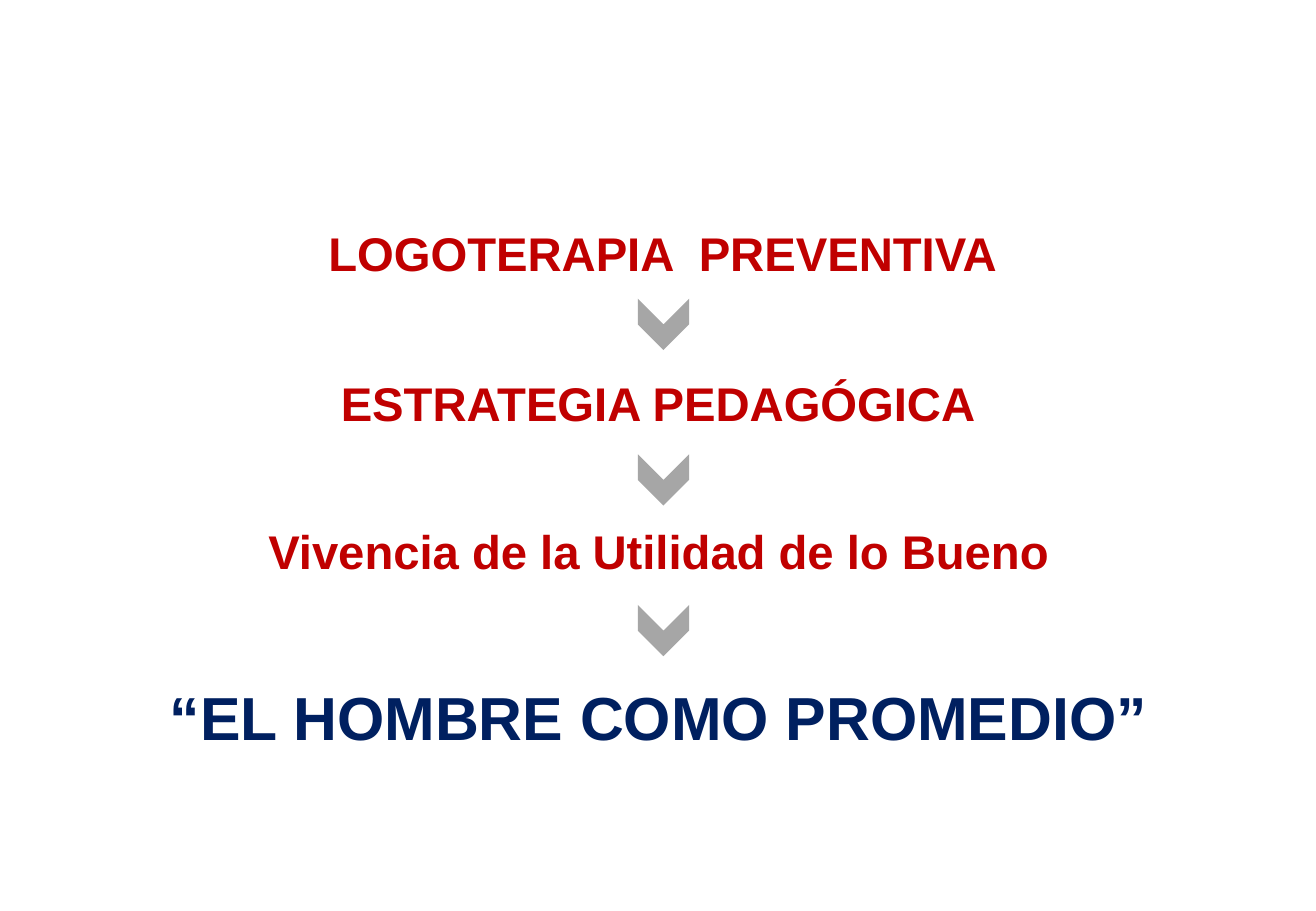
from dataclasses import dataclass

from pptx import Presentation
from pptx.dml.color import RGBColor
from pptx.enum.shapes import MSO_SHAPE
from pptx.enum.text import MSO_ANCHOR, PP_ALIGN
from pptx.util import Pt

CHEVRON = MSO_SHAPE.CHEVRON
MIDDLE = MSO_ANCHOR.MIDDLE
CENTER = PP_ALIGN.CENTER
BLANK_LAYOUT = 6


@dataclass(frozen=True)
class Theme:
    font: str = "Arial"
    step_size: float = 28
    conclusion_size: float = 36
    step_color: RGBColor = RGBColor(0xC0, 0x00, 0x00)
    conclusion_color: RGBColor = RGBColor(0x00, 0x20, 0x60)
    chevron_color: RGBColor = RGBColor(0xA6, 0xA6, 0xA6)


THEME = Theme()
PAGE_WIDTH, PAGE_HEIGHT = 779.76, 540
CHEVRON_CENTER, CHEVRON_SIZE = 393.1, 30.4
CHEVRON_TOPS = (177.1, 269.3, 358.6)
STEPS = (
    ("LOGOTERAPIA  PREVENTIVA", (120.2, 138.2, 545, 27.4)),
    ("ESTRATEGIA PEDAGÓGICA", (141.1, 215.3, 497.5, 51.1)),
    ("Vivencia de la Utilidad de lo Bueno", (97.2, 304.6, 586.1, 48.2)),
)
CONCLUSION = ("“EL HOMBRE COMO PROMEDIO”", (54, 393.8, 672.5, 67))


def set_attributes(target, values):
    for name, value in values.items():
        setattr(target, name, value)


def add_statement(page, text, bounds, size, color, inset):
    box = page.shapes.add_textbox(*map(Pt, bounds))
    frame = box.text_frame
    set_attributes(frame, {
        "word_wrap": True,
        "vertical_anchor": MIDDLE,
        "margin_left": Pt(inset),
        "margin_top": Pt(inset),
        "margin_right": Pt(inset),
        "margin_bottom": Pt(inset),
    })
    para = frame.paragraphs[0]
    set_attributes(para, {"alignment": CENTER, "line_spacing": 0.9})
    span = para.add_run()
    span.text = text
    set_attributes(span.font, {"name": THEME.font, "size": Pt(size), "bold": True})
    span.font.color.rgb = color


def add_down_chevron(page, top):
    left = CHEVRON_CENTER - CHEVRON_SIZE / 2
    chevron = page.shapes.add_shape(
        CHEVRON, Pt(left), Pt(top), Pt(CHEVRON_SIZE), Pt(CHEVRON_SIZE))
    chevron.rotation = 90
    chevron.shadow.inherit = False
    chevron.fill.solid()
    chevron.fill.fore_color.rgb = THEME.chevron_color
    chevron.line.fill.background()


def main():
    deck = Presentation()
    set_attributes(deck, {"slide_width": Pt(PAGE_WIDTH), "slide_height": Pt(PAGE_HEIGHT)})
    page = deck.slides.add_slide(deck.slide_layouts[BLANK_LAYOUT])
    for text, bounds in STEPS:
        add_statement(page, text, bounds, THEME.step_size, THEME.step_color, 6.5)
    add_statement(page, *CONCLUSION, THEME.conclusion_size, THEME.conclusion_color, 8.6)
    for top in CHEVRON_TOPS:
        add_down_chevron(page, top)
    deck.save("out.pptx")


if __name__ == "__main__":
    main()
